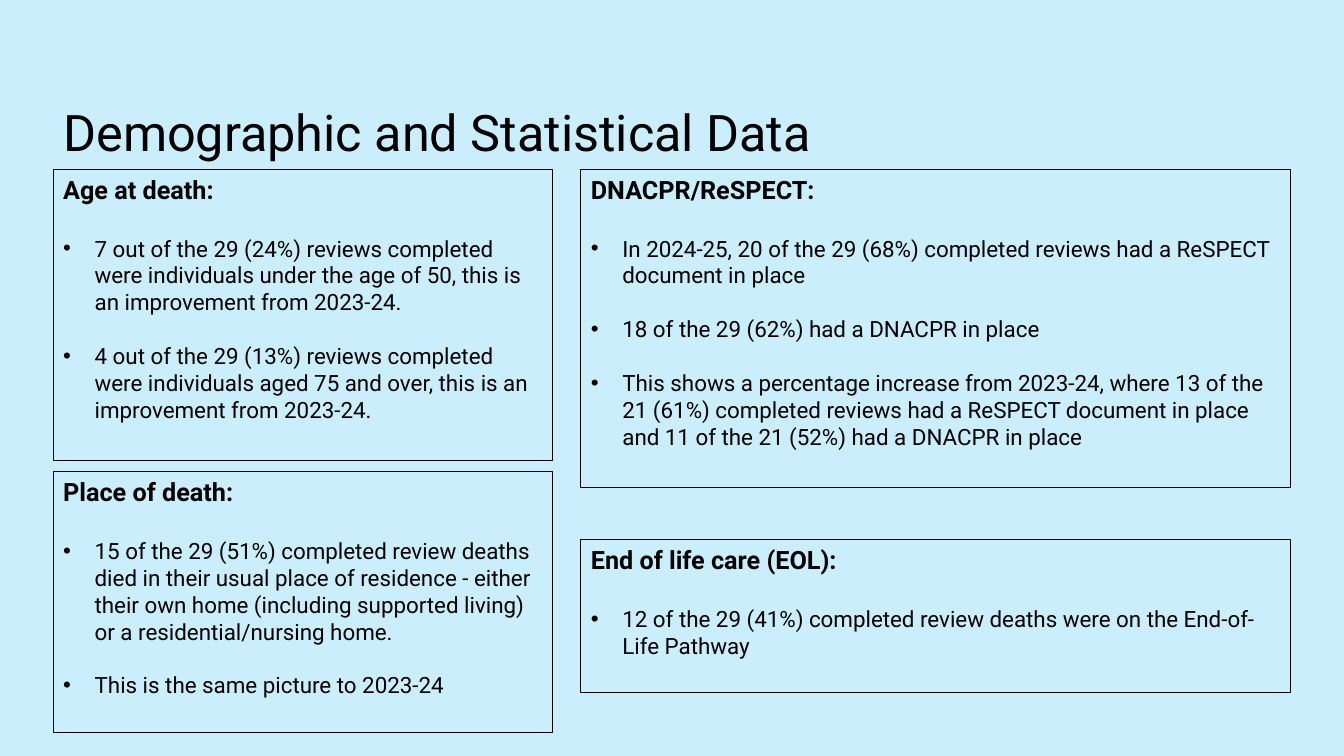
from pptx import Presentation
from pptx.dml.color import RGBColor
from pptx.enum.shapes import MSO_SHAPE
from pptx.enum.text import MSO_ANCHOR, PP_ALIGN
from pptx.oxml.ns import qn
from pptx.util import Pt
from lxml.etree import SubElement

FONT = "Roboto"
BLACK = "000000"
BACKGROUND = "CAEEFB"
BULLET_INDENT = 22.5
LEFT_COLUMN = (38, 356.5)
RIGHT_COLUMN = (415, 507)

PANELS = [
    (LEFT_COLUMN, 121, 208, "Age at death:", [
        "7 out of the 29 (24%) reviews completed were individuals under the age of 50, "
        "this is an improvement from 2023-24.",
        "4 out of the 29 (13%) reviews completed were individuals aged 75 and over, "
        "this is an improvement from 2023-24.",
    ]),
    (LEFT_COLUMN, 337, 186.5, "Place of death:", [
        "15 of the 29 (51%) completed review deaths died in their usual place of residence - "
        "either their own home (including supported living) or a residential/nursing home.",
        "This is the same picture to 2023-24",
    ]),
    (RIGHT_COLUMN, 385.5, 109, "End of life care (EOL):", [
        "12 of the 29 (41%) completed review deaths were on the End-of-Life Pathway",
    ]),
    (RIGHT_COLUMN, 121, 227.5, "DNACPR/ReSPECT:", [
        "In 2024-25, 20 of the 29 (68%) completed reviews had a ReSPECT document in place",
        "18 of the 29 (62%) had a DNACPR in place",
        "This shows a percentage increase from 2023-24, where 13 of the 21 (61%) completed "
        "reviews had a ReSPECT document in place and 11 of the 21 (52%) had a DNACPR in place",
    ]),
]


def color(hex_value):
    """Return the colour for a hex string."""
    return RGBColor.from_string(hex_value)


def format_paragraph(paragraph, size, bold=False):
    """Left-align a paragraph and format its runs."""
    paragraph.alignment = PP_ALIGN.LEFT
    for run in paragraph.runs:
        run.font.name = FONT
        run.font.size = Pt(size)
        run.font.bold = bold
        run.font.color.rgb = color(BLACK)


def add_bullet(paragraph):
    """Give a paragraph a hanging round bullet."""
    properties = paragraph._p.get_or_add_pPr()
    properties.set("marL", str(Pt(BULLET_INDENT)))
    properties.set("indent", str(-Pt(BULLET_INDENT)))
    SubElement(properties, qn("a:buFont")).set("typeface", "Arial")
    SubElement(properties, qn("a:buChar")).set("char", "•")


def set_title(slide, text):
    """Place and format the slide title."""
    title = slide.shapes.title
    title.left, title.top, title.width, title.height = Pt(38), Pt(44), Pt(828), Pt(104.5)
    title.text_frame.text = text
    title.text_frame.vertical_anchor = MSO_ANCHOR.MIDDLE
    paragraph = title.text_frame.paragraphs[0]
    paragraph.line_spacing = 0.9
    format_paragraph(paragraph, 36)


def add_panel(slide, column, top, height, heading, findings):
    """Add an outlined panel with a bold heading and bulleted findings."""
    left, width = column
    panel = slide.shapes.add_shape(
        MSO_SHAPE.RECTANGLE, Pt(left), Pt(top), Pt(width), Pt(height))
    panel.shadow.inherit = False
    panel.fill.background()
    panel.line.color.rgb = color(BLACK)
    panel.line.width = Pt(0.75)
    text_frame = panel.text_frame
    text_frame.word_wrap = True
    text_frame.vertical_anchor = MSO_ANCHOR.TOP
    text_frame.text = heading
    format_paragraph(text_frame.paragraphs[0], 18, bold=True)
    for index, finding in enumerate(findings):
        paragraph = text_frame.add_paragraph()
        paragraph.text = finding
        paragraph.space_before = Pt(19.2 if index else 21.5)
        add_bullet(paragraph)
        format_paragraph(paragraph, 16)


def main():
    """Build and save the slide."""
    presentation = Presentation()
    presentation.slide_width, presentation.slide_height = Pt(960), Pt(540)
    slide = presentation.slides.add_slide(presentation.slide_layouts[5])
    slide.background.fill.solid()
    slide.background.fill.fore_color.rgb = color(BACKGROUND)
    set_title(slide, "Demographic and Statistical Data")
    for panel in PANELS:
        add_panel(slide, *panel)
    presentation.save("out.pptx")


if __name__ == "__main__":
    main()
